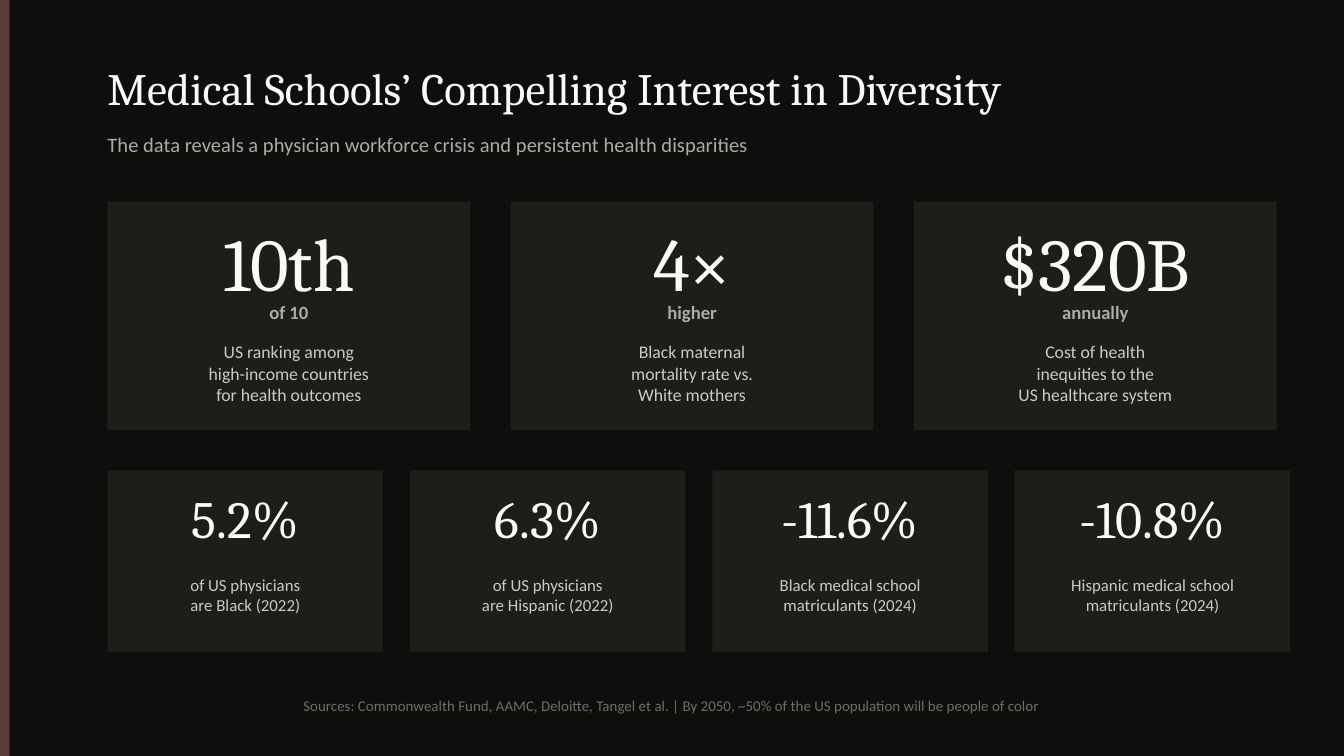
from pptx import Presentation
from pptx.dml.color import RGBColor
from pptx.enum.shapes import MSO_SHAPE
from pptx.enum.text import MSO_ANCHOR, PP_ALIGN
from pptx.util import Inches, Pt

WIDTH = 10
HEIGHT = WIDTH * 9 / 16
CELL = 0.05  # inches per grid column and row
COLUMNS, ROWS = WIDTH / CELL, HEIGHT / CELL
MARGIN = 16

COLORS = {
    "background": "0F0E0D",
    "accent": "593D3A",
    "card": "1F1D1A",
    "bright": "FAFAF9",
    "body": "CCCAC6",
    "muted": "ADABA5",
    "faint": "706D66",
}
SERIF, SANS = "Cambria", "Calibri"

HEADLINE_STATS = [
    ("10th", "of 10", "US ranking among\nhigh-income countries\nfor health outcomes"),
    ("4×", "higher", "Black maternal\nmortality rate vs.\nWhite mothers"),
    ("$320B", "annually", "Cost of health\ninequities to the\nUS healthcare system"),
]
WORKFORCE_STATS = [
    ("5.2%", "of US physicians\nare Black (2022)"),
    ("6.3%", "of US physicians\nare Hispanic (2022)"),
    ("-11.6%", "Black medical school\nmatriculants (2024)"),
    ("-10.8%", "Hispanic medical school\nmatriculants (2024)"),
]


class SlideBuilder:
    """Draws styled elements on one slide; lengths are grid columns and rows."""

    def __init__(self, presentation):
        self.slide = presentation.slides.add_slide(presentation.slide_layouts[6])
        fill = self.slide.background.fill
        fill.solid()
        fill.fore_color.rgb = self.color("background")

    @staticmethod
    def color(name):
        return RGBColor.from_string(COLORS[name])

    @staticmethod
    def place(*cells):
        return [round(cell * Inches(CELL)) for cell in cells]

    def panel(self, left, top, width, height, color="card"):
        shape = self.slide.shapes.add_shape(
            MSO_SHAPE.RECTANGLE, *self.place(left, top, width, height))
        shape.shadow.inherit = False
        shape.fill.solid()
        shape.fill.fore_color.rgb = self.color(color)
        shape.line.fill.background()

    def text(self, text, left, top, width, height, size, color,
             font=SANS, bold=False, align=PP_ALIGN.CENTER):
        box = self.slide.shapes.add_textbox(*self.place(left, top, width, height))
        frame = box.text_frame
        frame.word_wrap = True
        frame.vertical_anchor = MSO_ANCHOR.MIDDLE
        frame.margin_left = frame.margin_right = 0
        frame.margin_top = frame.margin_bottom = 0
        frame.text = text
        for paragraph in frame.paragraphs:
            paragraph.alignment = align
            for run in paragraph.runs:
                run.font.name = font
                run.font.size = Pt(size)
                run.font.bold = bold
                run.font.color.rgb = self.color(color)

    def headline_card(self, left, top, width, value, unit, description):
        self.panel(left, top, width, 34)
        self.text(value, left, top + 3, width, 12, 40, "bright", SERIF)
        self.text(unit, left, top + 14, width, 5, 10, "muted", bold=True)
        self.text(description, left, top + 19, width, 13, 9.5, "body")

    def workforce_card(self, left, top, width, value, description):
        self.panel(left, top, width, 27)
        self.text(value, left, top + 2, width, 10, 28, "bright", SERIF)
        self.text(description, left, top + 13, width, 11, 9, "body")

    def card_row(self, draw_card, stats, top, width, gap):
        for index, stat in enumerate(stats):
            draw_card(MARGIN + index * (width + gap), top, width, *stat)


def main():
    presentation = Presentation()
    presentation.slide_width = Inches(WIDTH)
    presentation.slide_height = Inches(HEIGHT)

    builder = SlideBuilder(presentation)
    builder.panel(0, 0, 1.4, ROWS, "accent")
    heading_width = COLUMNS - 2 * MARGIN
    builder.text("Medical Schools’ Compelling Interest in Diversity",
                 MARGIN, 7, heading_width, 12, 24, "bright", SERIF,
                 align=PP_ALIGN.LEFT)
    builder.text("The data reveals a physician workforce crisis and "
                 "persistent health disparities",
                 MARGIN, 18, heading_width, 7, 11, "muted", align=PP_ALIGN.LEFT)
    builder.card_row(builder.headline_card, HEADLINE_STATS, top=30, width=54, gap=6)
    builder.card_row(builder.workforce_card, WORKFORCE_STATS, top=70, width=41, gap=4)
    builder.text("Sources: Commonwealth Fund, AAMC, Deloitte, Tangel et al. | "
                 "By 2050, ~50% of the US population will be people of color",
                 10, 102, COLUMNS - 20, 6, 8, "faint")
    presentation.save("out.pptx")


if __name__ == "__main__":
    main()
